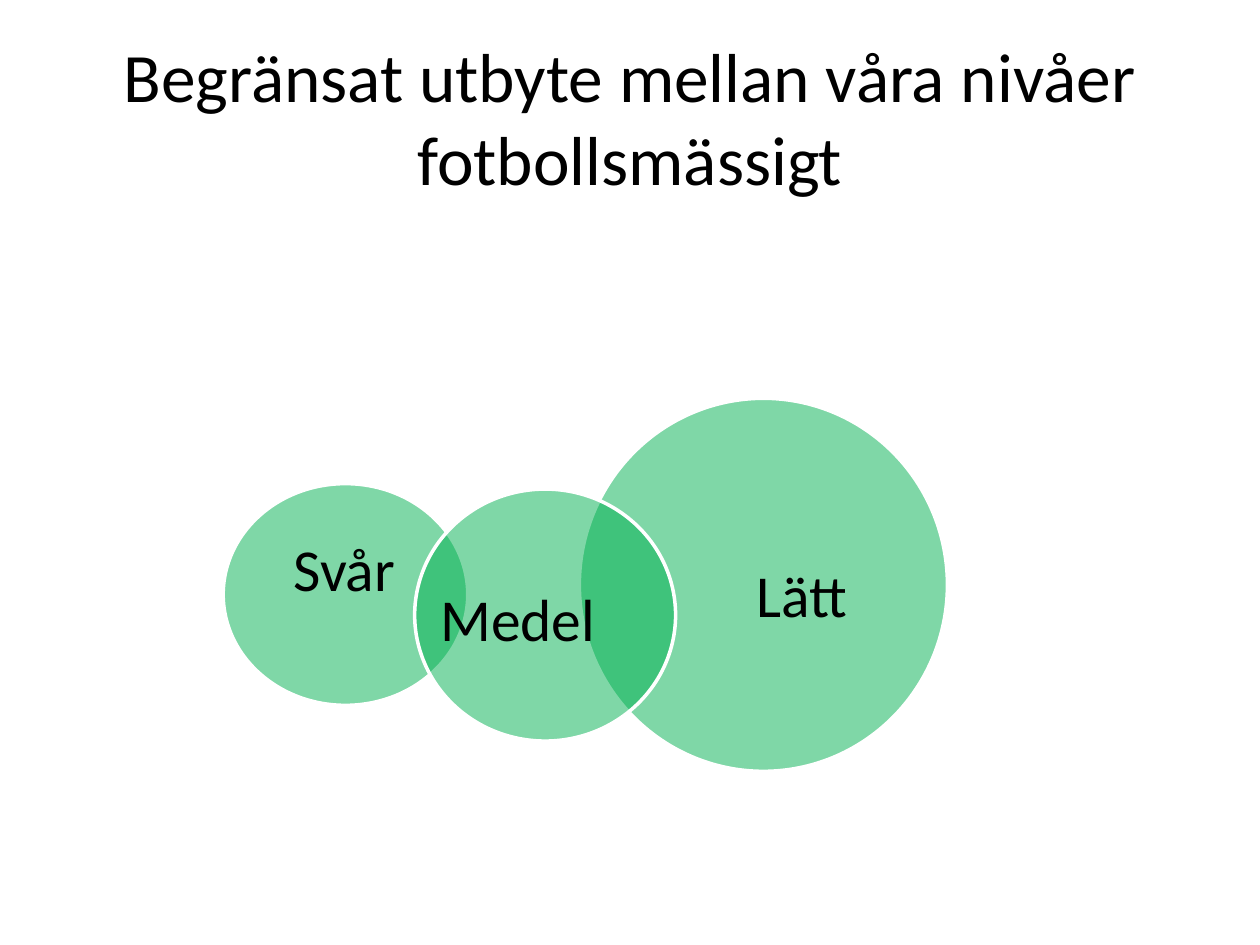
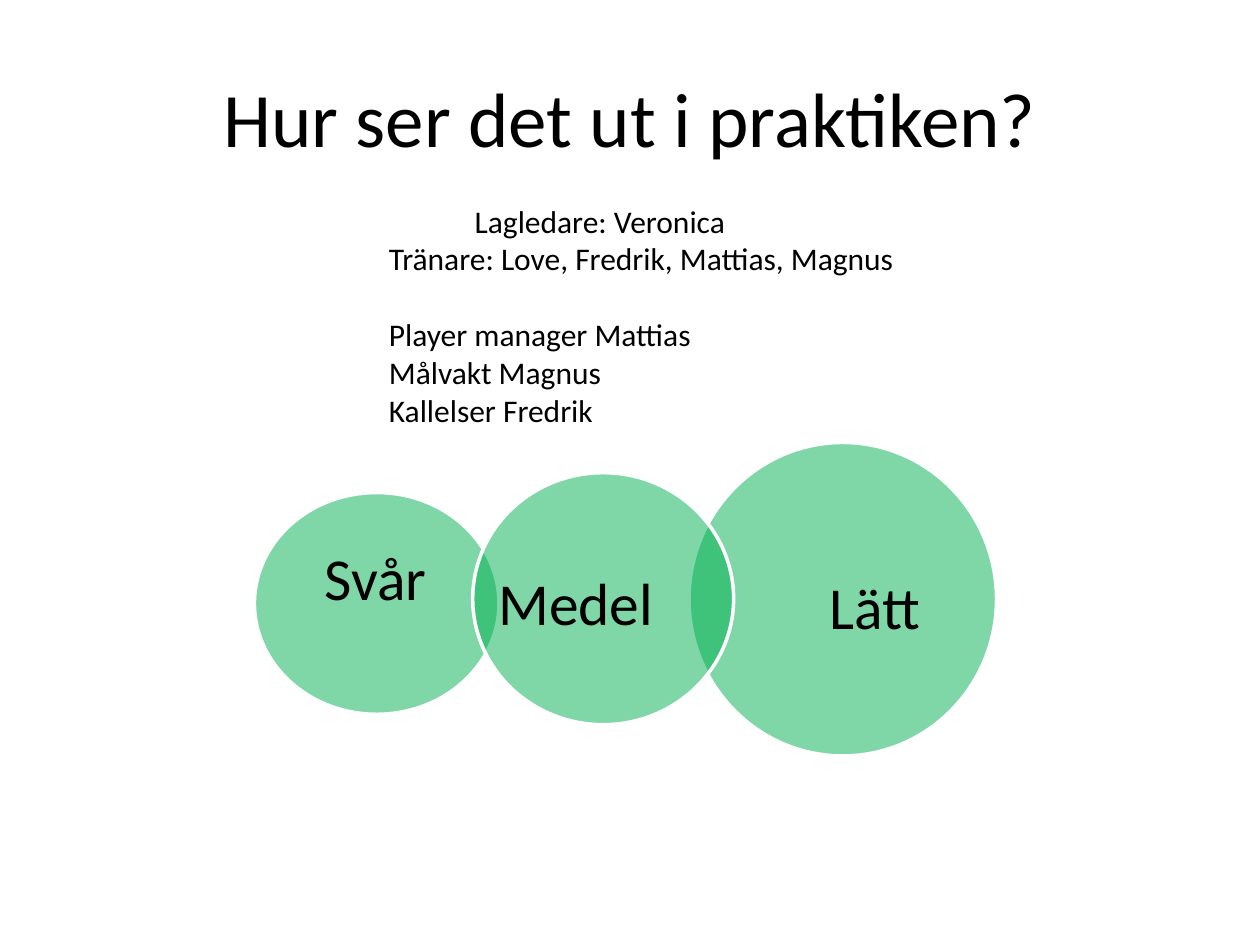
from lxml import etree
from pptx import Presentation
from pptx.dml.color import RGBColor
from pptx.enum.shapes import MSO_SHAPE
from pptx.enum.text import MSO_ANCHOR, MSO_AUTO_SIZE, PP_ALIGN
from pptx.oxml.ns import qn
from pptx.util import Cm, Pt

COLORS = {"text": "000000", "circle": "00B050", "outline": "FFFFFF"}
FONT = "Calibri"
LABEL_AREAS = {
    "Svår": (0.13, 0.175, 0.73, 0.45),
    "Lätt": (0.305, 0.26, 0.6, 0.55),
    "Medel": (0.095, 0.255, 0.6, 0.55),
}
SLIDES = [
    {
        "title": "Begränsat utbyte mellan våra nivåer fotbollsmässigt",
        "title_size": 39.6,
        "circles": [
            ("Svår", 4.5, 9.75, 4.93, 4.47),
            ("Lätt", 11.68, 8.03, 7.42, 7.52),
            ("Medel", 8.36, 9.86, 5.26, 5.08),
        ],
        "notes": [],
    },
    {
        "title": "Hur ser det ut i praktiken?",
        "title_size": 44,
        "circles": [
            ("Svår", 5.13, 9.93, 4.93, 4.47),
            ("Lätt", 13.89, 8.92, 6.2, 6.32),
            ("Medel", 9.53, 9.53, 5.26, 5.08),
        ],
        "notes": [
            (9.32, 3.94, 5.64, 1.02, [("Lagledare: Veronica", 0)]),
            (7.59, 4.7, 10.97, 4.11, [
                ("Tränare: Love, Fredrik, Mattias, Magnus", 0),
                ("Player manager Mattias", 21.6),
                ("Målvakt Magnus", 0),
                ("Kallelser Fredrik", 0),
            ]),
        ],
    },
]


def style_paragraph(paragraph, size, alignment):
    paragraph.alignment = alignment
    paragraph.font.name = FONT
    paragraph.font.size = Pt(size)
    paragraph.font.color.rgb = RGBColor.from_string(COLORS["text"])


deck = Presentation()
deck.slide_width = Cm(25.4)
deck.slide_height = Cm(19.05)

for content in SLIDES:
    page = deck.slides.add_slide(deck.slide_layouts[5])
    title = page.shapes.title
    title.left, title.top, title.width, title.height = Cm(1.27), Cm(0.76), Cm(22.86), Cm(3.18)
    title.text_frame.text = content["title"]
    title.text_frame.word_wrap = True
    title.text_frame.vertical_anchor = MSO_ANCHOR.MIDDLE
    style_paragraph(title.text_frame.paragraphs[0], content["title_size"], PP_ALIGN.CENTER)

    for level, left, top, width, height in content["circles"]:
        circle = page.shapes.add_shape(MSO_SHAPE.OVAL, Cm(left), Cm(top), Cm(width), Cm(height))
        circle.shadow.inherit = False
        circle.fill.solid()
        circle.fill.fore_color.rgb = RGBColor.from_string(COLORS["circle"])
        fill_color = circle.element.spPr.find(qn("a:solidFill")).find(qn("a:srgbClr"))
        etree.SubElement(fill_color, qn("a:alpha")).set("val", "50000")
        circle.line.color.rgb = RGBColor.from_string(COLORS["outline"])
        circle.line.width = Pt(2)

        across, down, wide, high = LABEL_AREAS[level]
        label = page.shapes.add_textbox(
            Cm(left + across * width), Cm(top + down * height), Cm(wide * width), Cm(high * height)
        )
        frame = label.text_frame
        frame.margin_left = frame.margin_right = frame.margin_top = frame.margin_bottom = 0
        frame.word_wrap = True
        frame.vertical_anchor = MSO_ANCHOR.MIDDLE
        frame.text = level
        frame.paragraphs[0].line_spacing = 0.9
        style_paragraph(frame.paragraphs[0], 34, PP_ALIGN.CENTER)

    for left, top, width, height, lines in content["notes"]:
        box = page.shapes.add_textbox(Cm(left), Cm(top), Cm(width), Cm(height))
        frame = box.text_frame
        frame.word_wrap = False
        frame.auto_size = MSO_AUTO_SIZE.SHAPE_TO_FIT_TEXT
        frame.text = "\n".join(text for text, gap in lines)
        for paragraph, (text, gap) in zip(frame.paragraphs, lines):
            paragraph.space_before = Pt(gap)
            style_paragraph(paragraph, 18, PP_ALIGN.LEFT)

deck.save("out.pptx")
